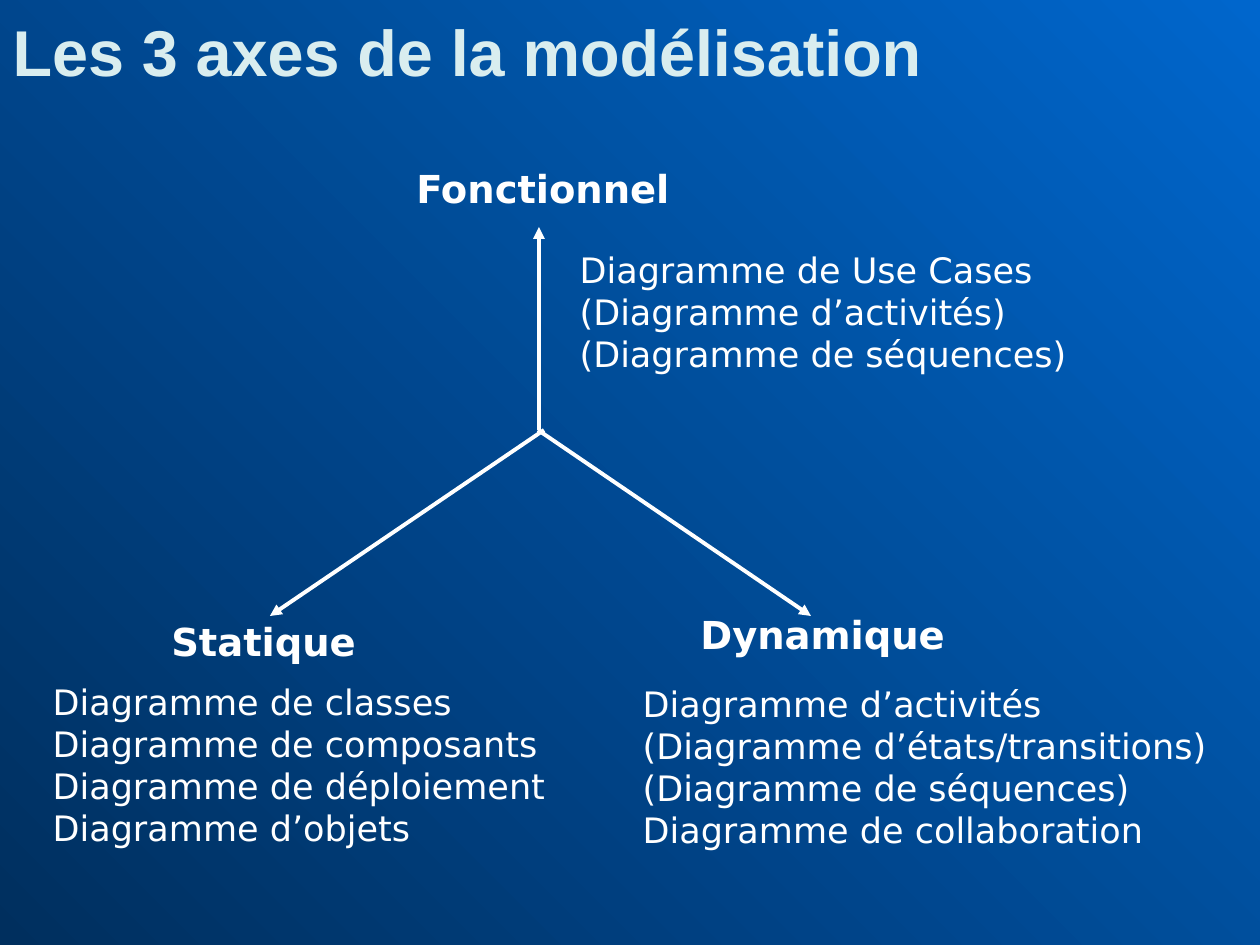
from lxml.etree import SubElement
from pptx import Presentation
from pptx.dml.color import RGBColor
from pptx.enum.shapes import MSO_CONNECTOR
from pptx.enum.text import MSO_ANCHOR, MSO_AUTO_SIZE, PP_ALIGN
from pptx.oxml.ns import qn
from pptx.util import Pt

HUES = {"dark": "002F5E", "light": "0066CC", "title": "D9EDEF", "text": "FFFFFF"}
FORMS = {
    "title": {"name": "Arial", "size": Pt(37), "bold": True},
    "label": {"name": "DejaVu Sans", "size": Pt(22), "bold": True},
    "list": {"name": "DejaVu Sans", "size": Pt(20), "bold": False},
}


def px(num):
    """Turn pixels (126 to the inch) into EMU."""
    return round(num * 914400 / 126)


def write(shape, box, lines, form, hue="text"):
    """Place a shape and fill it with plain left-aligned lines."""
    shape.left, shape.top, shape.width, shape.height = map(px, box)
    frame = shape.text_frame
    frame.text = "\n".join(lines)
    frame.word_wrap = True
    frame.auto_size = MSO_AUTO_SIZE.NONE
    frame.vertical_anchor = MSO_ANCHOR.TOP
    for para in frame.paragraphs:
        para.alignment = PP_ALIGN.LEFT
        para.space_before = Pt(0)
        props = para._p.get_or_add_pPr()
        props.set("marL", "0")
        props.set("indent", "0")
        SubElement(props, qn("a:buNone"))
        font = para.runs[0].font
        for key, val in FORMS[form].items():
            setattr(font, key, val)
        font.color.rgb = RGBColor.from_string(HUES[hue])


deck = Presentation()
deck.slide_width, deck.slide_height = px(1260), px(945)
slide = deck.slides.add_slide(deck.slide_layouts.get_by_name("Comparison"))

fill = slide.background.fill
fill.gradient()
fill.gradient_angle = 45
for stop, hue in zip(fill.gradient_stops, ("dark", "light")):
    stop.color.rgb = RGBColor.from_string(HUES[hue])

# Title
title = slide.shapes.title
write(title, (0, 0, 1260, 91), ["Les 3 axes de la modélisation"], "title", "title")
title.text_frame.margin_top = px(12)

# Axes, each from the centre outwards
for start, end in (
    ((539, 430), (539, 227)),
    ((544, 430), (270, 616)),
    ((538, 430), (811, 616)),
):
    axis = slide.shapes.add_connector(MSO_CONNECTOR.STRAIGHT, *map(px, start + end))
    axis.line.width = Pt(2.25)
    axis.line.color.rgb = RGBColor.from_string(HUES["text"])
    SubElement(axis.line._get_or_add_ln(), qn("a:tailEnd"), type="triangle")
    SubElement(axis._element.spPr, qn("a:effectLst"))

# Axis names
for name, box in (
    ("Fonctionnel", (404, 159, 289, 81)),
    ("Dynamique", (688, 605, 273, 81)),
    ("Statique", (159, 612, 213, 113)),
):
    write(slide.shapes.add_textbox(0, 0, 0, 0), box, [name], "label")

# Diagrams of each axis
lists = (
    ((567, 242, 621, 134), [
        "Diagramme de Use Cases",
        "(Diagramme d’activités)",
        "(Diagramme de séquences)",
    ]),
    ((40, 674, 587, 188), [
        "Diagramme de classes",
        "Diagramme de composants",
        "Diagramme de déploiement",
        "Diagramme d’objets",
    ]),
    ((630, 676, 625, 188), [
        "Diagramme d’activités",
        "(Diagramme d’états/transitions)",
        "(Diagramme de séquences)",
        "Diagramme de collaboration",
    ]),
)
*bodies, spare = list(slide.placeholders)[1:5]
for body, (box, lines) in zip(bodies, lists):
    write(body, box, lines, "list")
spare._element.getparent().remove(spare._element)

deck.save("out.pptx")
